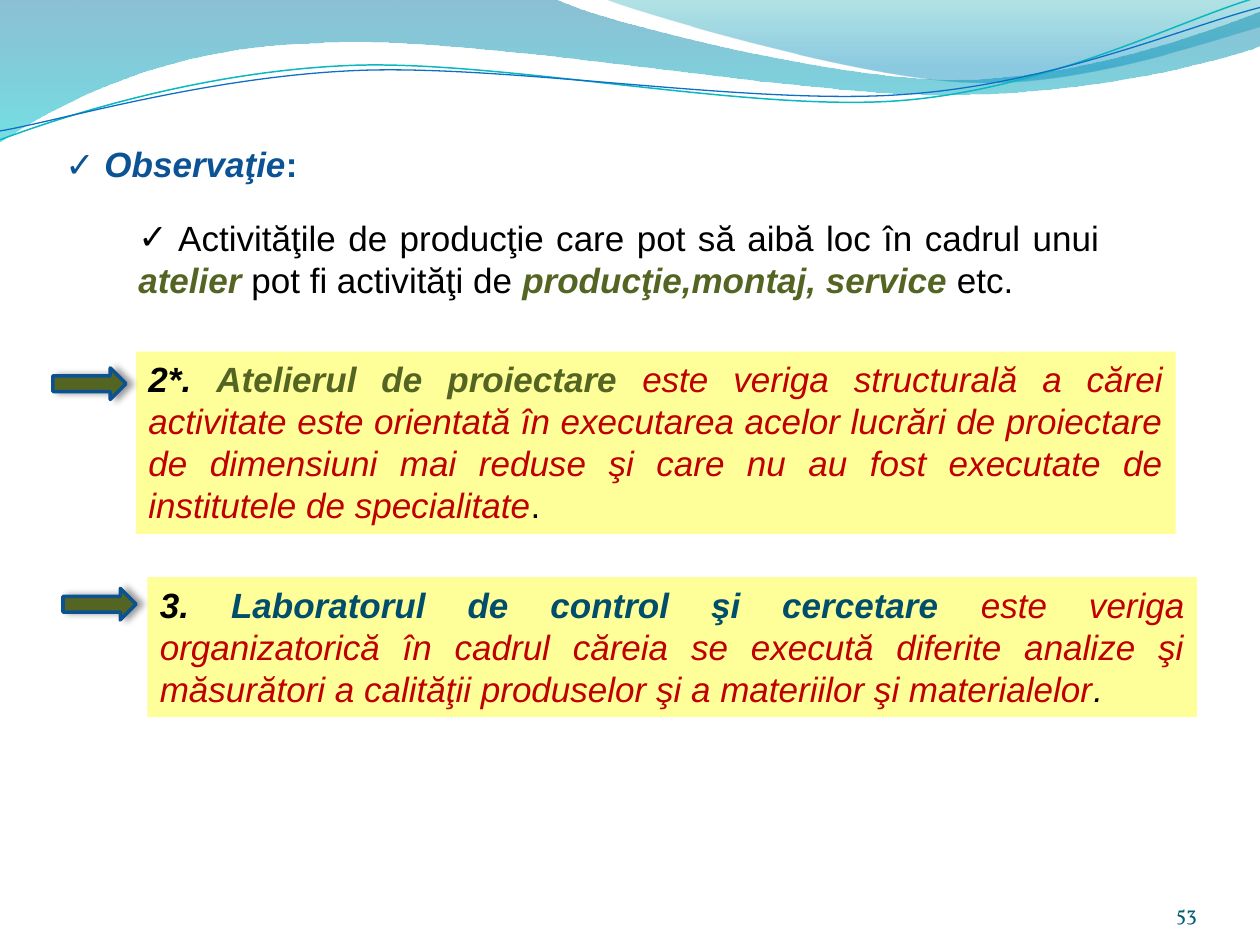
from math import cos, radians, sin
from typing import NamedTuple

from lxml.etree import SubElement
from pptx import Presentation
from pptx.dml.color import RGBColor as RGB
from pptx.enum.shapes import MSO_SHAPE as SHAPE
from pptx.enum.text import MSO_ANCHOR as ANCHOR, MSO_AUTO_SIZE as AUTO, PP_ALIGN as ALIGN
from pptx.oxml.ns import qn
from pptx.util import Inches, Pt

COLORS = {
    "black": "000000", "olive": "546422", "red": "C00000", "navy": "004E6C",
    "title": "0B5394", "outline": "0B5292", "panel": "FFFF99", "number": "045D75",
    "deep": "0074A1", "cyan": "00C6CF", "teal": "00A1A9", "sky": "008BBF",
    "teal_line": "0AB8BF", "blue_line": "0F6FC6",
}


class Run(NamedTuple):
    text: str
    color: str = "black"
    bold: bool = False
    italic: bool = False


class Stop(NamedTuple):
    position: float
    color: str
    alpha: int


class Wave(NamedTuple):
    start: tuple
    segments: list
    stops: tuple = ()
    line: str = ""
    width: float = 0
    tilt: float = 0


class Definition(NamedTuple):
    box: tuple
    arrow: tuple
    runs: list


WAVES = [
    Wave((0, 0), [
        (4.4, -0.01), (4.76, 0.17, 6.64, 0.63, 7.58, 0.63), (8.53, 0.63, 9.58, 0.26, 10, 0.09),
        (10.01, 0.36), (9.83, 0.44, 8.7, 0.76, 7.46, 0.75), (6.22, 0.75, 3.82, 0.28, 2.57, 0.34),
        (1.29, 0.36, 0.46, 0.83, -0.01, 1.13)],
        stops=(Stop(0, "deep", 45), Stop(1, "cyan", 55))),
    Wave((4.79, -0.01), [
        (5.09, 0.11, 6.82, 0.62, 7.69, 0.65), (8.56, 0.69, 9.61, 0.32, 10, 0.21), (10, 0)],
        stops=(Stop(0, "teal", 30), Stop(0.8, "sky", 45))),
    Wave((0, 1.11), [
        (0.48, 0.93, 1.58, 0.57, 2.77, 0.52), (3.95, 0.47, 5.93, 0.89, 7.13, 0.8),
        (8.33, 0.71, 9.38, 0.15, 9.98, -0.02)], line="teal_line", width=0.85, tilt=2.7),
    Wave((0, 1.04), [
        (0.47, 0.96, 1.64, 0.61, 2.83, 0.56), (4.03, 0.51, 5.97, 0.84, 7.17, 0.75),
        (8.36, 0.67, 9.41, 0.21, 10, 0.06)], line="blue_line", width=0.75, tilt=2.7),
]

DEFINITIONS = [
    Definition((1.08, 2.79, 8.25, 1.45), (0.42, 2.92, 0.58, 0.25), [
        Run("2*. ", bold=True, italic=True),
        Run("Atelierul de proiectare ", "olive", True, True),
        Run("este veriga structurală a cărei activitate este orientată în executarea acelor "
            "lucrări de proiectare de dimensiuni mai reduse şi care nu au fost executate de "
            "institutele de specialitate", "red", italic=True),
        Run(".")]),
    Definition((1.17, 4.58, 8.33, 1.11), (0.5, 4.67, 0.58, 0.25), [
        Run("3. ", bold=True, italic=True),
        Run("Laboratorul de control şi cercetare ", "navy", True, True),
        Run("este veriga organizatorică în cadrul căreia se execută diferite analize şi "
            "măsurători a calităţii produselor şi a materiilor şi materialelor", "red", italic=True),
        Run(".", italic=True)]),
]


def rgb(name: str) -> RGB:
    return RGB.from_string(COLORS[name])


def turn(x: float, y: float, degrees: float) -> tuple:
    a = radians(degrees)
    return int(x * cos(a) - y * sin(a)), int(x * sin(a) + y * cos(a))


def add_wave(s, wave: Wave) -> None:
    parts = [[turn(Inches(x), Inches(y), wave.tilt) for x, y in zip(seg[::2], seg[1::2])]
             for seg in [wave.start, *wave.segments]]
    builder = s.shapes.build_freeform(*parts[0][0])
    builder.add_line_segments([part[-1] for part in parts[1:]], close=bool(wave.stops))
    sp = builder.convert_to_shape()
    sp.shadow.inherit = False
    for node, part in zip(list(sp._element.iter(qn("a:lnTo"))), parts[1:]):
        if len(part) == 3:
            curve = SubElement(node.getparent(), qn("a:cubicBezTo"))
            for x, y in part:
                SubElement(curve, qn("a:pt"), x=str(x - sp.left), y=str(y - sp.top))
            node.getparent().replace(node, curve)
    if wave.line:
        cx, cy = turn(sp.left + sp.width / 2, sp.top + sp.height / 2, -wave.tilt)
        sp.left, sp.top = cx - sp.width // 2, cy - sp.height // 2
        sp.rotation = -wave.tilt
        sp.fill.background()
        sp.line.color.rgb = rgb(wave.line)
        sp.line.width = Pt(wave.width)
        return
    sp.line.fill.background()
    sp.fill.gradient()
    sp.fill.gradient_angle = 270
    for target, stop in zip(sp.fill.gradient_stops, wave.stops):
        target.color.rgb = rgb(stop.color)
        target.position = stop.position
    for node, stop in zip(sp._element.spPr.iter(qn("a:srgbClr")), wave.stops):
        SubElement(node, qn("a:alpha"), val=str(stop.alpha * 1000))


def add_shadow(effects, angle: int) -> None:
    shadow = SubElement(effects, qn("a:outerShdw"), blurRad=str(Pt(4)), dist=str(Pt(3)),
                        dir=str(angle * 60000), algn="tl", rotWithShape="0")
    color = SubElement(shadow, qn("a:srgbClr"), val=COLORS["black"])
    SubElement(color, qn("a:alpha"), val="40000")


def add_text(s, box: tuple, runs: list, *, size: float = 20, font: str = "Arial",
             align=ALIGN.LEFT, anchor=ANCHOR.TOP, wrap: bool = True, grow: bool = True,
             fill: str = "", bullet: str = "", inset: bool = True, shadow: bool = False) -> None:
    place = [Inches(v) for v in box]
    if fill:
        sp = s.shapes.add_shape(SHAPE.RECTANGLE, *place)
        sp.shadow.inherit = False
        sp.fill.solid()
        sp.fill.fore_color.rgb = rgb(fill)
        sp.line.fill.background()
    else:
        sp = s.shapes.add_textbox(*place)
    tf = sp.text_frame
    tf.word_wrap = wrap
    tf.auto_size = AUTO.SHAPE_TO_FIT_TEXT if grow else AUTO.NONE
    tf.vertical_anchor = anchor
    if not inset:
        tf.margin_left = tf.margin_right = tf.margin_top = tf.margin_bottom = 0
    p = tf.paragraphs[0]
    p.alignment = align
    if bullet:
        pPr = p._p.get_or_add_pPr()
        SubElement(pPr, qn("a:buFont"), typeface=font)
        SubElement(pPr, qn("a:buChar"), char=bullet)
    for run in runs:
        r = p.add_run()
        r.text = run.text
        r.font.size = Pt(size)
        r.font.bold, r.font.italic = run.bold, run.italic
        r.font.color.rgb = rgb(run.color)
        if shadow:
            add_shadow(SubElement(r._r.get_or_add_rPr(), qn("a:effectLst")), 45)
        r.font.name = font


def add_arrow(s, box: tuple) -> None:
    sp = s.shapes.add_shape(SHAPE.RIGHT_ARROW, *[Inches(v) for v in box])
    sp.fill.solid()
    sp.fill.fore_color.rgb = rgb("olive")
    sp.line.color.rgb = rgb("outline")
    sp.line.width = Pt(2)
    sp.shadow.inherit = False
    add_shadow(sp._element.spPr.find(qn("a:effectLst")), 0)


def main() -> None:
    """Build the slide on workshops and laboratories."""
    prs = Presentation()
    prs.slide_width, prs.slide_height = Inches(10), Inches(7.5)
    s = prs.slides.add_slide(prs.slide_layouts[6])
    for wave in WAVES:
        add_wave(s, wave)
    add_text(s, (8.67, 6.95, 0.83, 0.4), [Run("53", "number")], size=12, font="Vollkorn",
             align=ALIGN.RIGHT, anchor=ANCHOR.BOTTOM, grow=False, inset=False)
    add_text(s, (0.42, 1.08, 2.12, 0.44), [
        Run("✓ Observaţie", "title", True, True), Run(":", "title", True)],
        wrap=False, shadow=True)
    add_text(s, (1, 1.67, 7.83, 0.77), [
        Run(" Activităţile de producţie care pot să aibă loc în cadrul unui "),
        Run("atelier", "olive", True, True),
        Run(" pot fi activităţi de "),
        Run("producţie,montaj, service ", "olive", True, True),
        Run("etc.")], align=ALIGN.JUSTIFY, bullet="✓")
    for item in DEFINITIONS:
        add_text(s, item.box, item.runs, align=ALIGN.JUSTIFY, fill="panel")
        add_arrow(s, item.arrow)
    prs.save("out.pptx")


if __name__ == "__main__":
    main()
